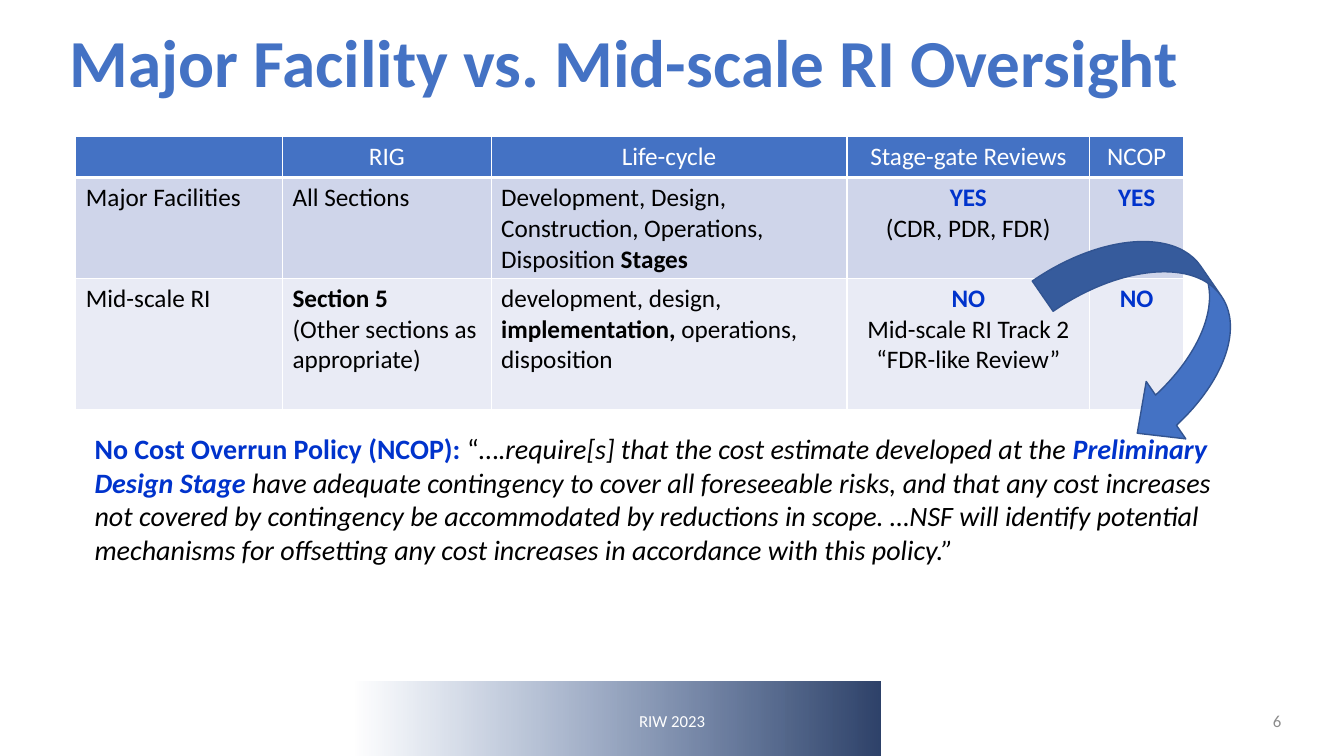
from lxml.etree import SubElement
from pptx import Presentation
from pptx.dml.color import RGBColor
from pptx.enum.shapes import MSO_SHAPE
from pptx.enum.text import MSO_ANCHOR, PP_ALIGN
from pptx.oxml.ns import qn
from pptx.util import Pt

# Content: a paragraph is a list of (text, style) runs
TITLE = "Major Facility vs. Mid-scale RI Oversight"
HEADERS = ["", "RIG", "Life-cycle", "Stage-gate Reviews", "NCOP"]
ROWS = [
    [
        [[("Major Facilities", "plain")]],
        [[("All Sections", "plain")]],
        [[("Development, Design, Construction, Operations, Disposition ", "plain"),
          ("Stages", "bold")]],
        [[("YES", "key")], [("(CDR, PDR, FDR)", "plain")]],
        [[("YES", "key")]],
    ],
    [
        [[("Mid-scale RI", "plain")]],
        [[("Section 5", "bold")], [("(Other sections as appropriate)", "plain")]],
        [[("development, design, ", "plain"), ("implementation, ", "bold"),
          ("operations, disposition", "plain")]],
        [[("NO", "key")], [("Mid-scale RI Track 2 “FDR-like Review”", "plain")]],
        [[("NO", "key")]],
    ],
]
POLICY = [[
    ("No Cost Overrun Policy (NCOP): ", "key"),
    ("“….", "plain"),
    ("require[s] that the cost estimate developed at the ", "italic"),
    ("Preliminary Design Stage", "key italic"),
    (" have adequate contingency to cover all foreseeable risks, and that any cost "
     "increases not covered by contingency be accommodated by reductions in scope. "
     "…NSF will identify potential mechanisms for offsetting any cost increases in "
     "accordance with this policy.”", "italic"),
]]
FOOTER = "RIW 2023"
PAGE_NUMBER = "6"

# Layout in points
COLUMN_WIDTHS = [147.6, 149, 254.2, 173.5, 67]
ROW_HEIGHTS = [29.2, 72, 93.6]
CENTRED_COLUMNS = (3, 4)


class Theme:
    font = "Calibri"
    accent, accent_line, key = "4472C4", "325491", "0033CC"
    text, white, grey = "000000", "FFFFFF", "8C8C8C"
    bands = ["CFD5EA", "E9EBF5"]
    footer_start, footer_end = "2F5597", "2E426A"
    title_size, policy_size, table_size, footer_size = 48, 20, 18, 12


def color(value):
    return RGBColor.from_string(value)


def write_text(frame, paragraphs, size, text_color=Theme.text, bold=False,
               align=PP_ALIGN.LEFT, anchor=MSO_ANCHOR.TOP):
    """Fill a text frame with one string or with paragraphs of styled runs."""
    if isinstance(paragraphs, str):
        paragraphs = [[(paragraphs, "plain")]]
    frame.word_wrap = True
    frame.vertical_anchor = anchor
    for index, runs in enumerate(paragraphs):
        paragraph = frame.add_paragraph() if index else frame.paragraphs[0]
        paragraph.alignment = align
        for text, style in runs:
            run = paragraph.add_run()
            run.text = text
            run.font.name = Theme.font
            run.font.size = Pt(size)
            run.font.bold = bold or "bold" in style or "key" in style
            run.font.italic = "italic" in style
            run.font.color.rgb = color(Theme.key if "key" in style else text_color)


def add_text(slide, box, paragraphs, size, **text_format):
    shape = slide.shapes.add_textbox(*map(Pt, box))
    write_text(shape.text_frame, paragraphs, size, **text_format)


def style_cell(cell, fill, bottom_width=1):
    """Set white borders, then the fill, in the order the schema asks for."""
    properties = cell._tc.get_or_add_tcPr()
    for side, width in (("L", 1), ("R", 1), ("T", 1), ("B", bottom_width)):
        line = SubElement(properties, qn(f"a:ln{side}"), w=str(Pt(width)))
        SubElement(SubElement(line, qn("a:solidFill")), qn("a:srgbClr"), val=Theme.white)
    cell.fill.solid()
    cell.fill.fore_color.rgb = color(fill)


def add_footer_band(slide):
    band = slide.shapes.add_shape(MSO_SHAPE.RECTANGLE, Pt(252), Pt(486.7), Pt(376.6), Pt(53.3))
    band.shadow.inherit = False
    band.line.fill.background()
    band.fill.gradient()
    band.fill.gradient_angle = 0
    stops = band.fill.gradient_stops
    for stop, value in zip(stops, (Theme.footer_start, Theme.footer_end)):
        stop.color.rgb = color(value)
    # The left end is fully transparent
    SubElement(band._element.findall(".//" + qn("a:srgbClr"))[0], qn("a:alpha"), val="0")


def add_comparison_table(slide):
    table = slide.shapes.add_table(
        len(ROW_HEIGHTS), len(COLUMN_WIDTHS), Pt(54.2), Pt(97.6),
        Pt(sum(COLUMN_WIDTHS)), Pt(sum(ROW_HEIGHTS))).table
    for column, width in zip(table.columns, COLUMN_WIDTHS):
        column.width = Pt(width)
    for row, height in zip(table.rows, ROW_HEIGHTS):
        row.height = Pt(height)
    for column, header in enumerate(HEADERS):
        cell = table.cell(0, column)
        style_cell(cell, Theme.accent, bottom_width=3)
        if header:
            write_text(cell.text_frame, header, Theme.table_size,
                       text_color=Theme.white, align=PP_ALIGN.CENTER)
    for row, (contents, band) in enumerate(zip(ROWS, Theme.bands), start=1):
        for column, paragraphs in enumerate(contents):
            cell = table.cell(row, column)
            style_cell(cell, band)
            centred = column in CENTRED_COLUMNS
            write_text(cell.text_frame, paragraphs, Theme.table_size,
                       align=PP_ALIGN.CENTER if centred else PP_ALIGN.LEFT)
            # The table style alone would top the row with the header rule
            cell.vertical_anchor = MSO_ANCHOR.TOP


def add_policy_arrow(slide):
    arrow = slide.shapes.add_shape(
        MSO_SHAPE.CURVED_LEFT_ARROW, Pt(772.6), Pt(157), Pt(105.1), Pt(157))
    arrow.shadow.inherit = False
    arrow.rotation = 325.4
    for index, value in enumerate((0.25, 0.474, 0.25)):
        arrow.adjustments[index] = value
    arrow.fill.solid()
    arrow.fill.fore_color.rgb = color(Theme.accent)
    arrow.line.color.rgb = color(Theme.accent_line)
    arrow.line.width = Pt(1)


def main():
    presentation = Presentation()
    presentation.slide_width, presentation.slide_height = Pt(960), Pt(540)
    slide = presentation.slides.add_slide(presentation.slide_layouts[6])

    add_footer_band(slide)
    add_text(slide, (706.3, 500.4, 216, 28.8), PAGE_NUMBER, Theme.footer_size,
             text_color=Theme.grey, align=PP_ALIGN.RIGHT, anchor=MSO_ANCHOR.MIDDLE)
    add_text(slide, (42.5, 10.8, 848.2, 65.5), TITLE, Theme.title_size,
             text_color=Theme.accent, bold=True)
    add_comparison_table(slide)
    add_text(slide, (60.5, 304.6, 830.2, 104.4), POLICY, Theme.policy_size)
    add_policy_arrow(slide)
    add_text(slide, (318.2, 500.4, 324, 28.8), FOOTER, Theme.footer_size,
             text_color=Theme.white, align=PP_ALIGN.CENTER, anchor=MSO_ANCHOR.MIDDLE)

    presentation.save("out.pptx")


if __name__ == "__main__":
    main()
